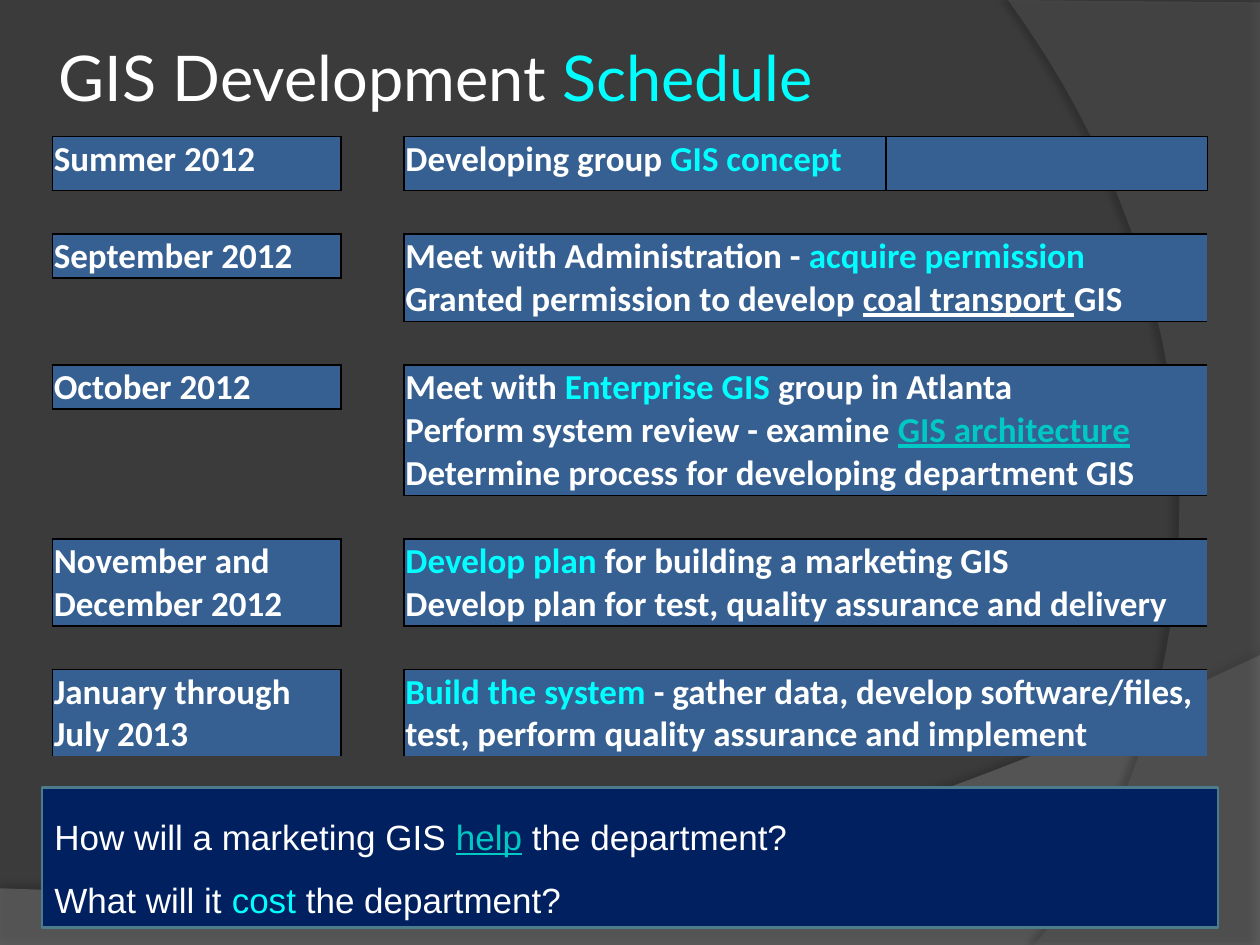
from lxml import etree
from pptx import Presentation
from pptx.dml.color import RGBColor
from pptx.enum.shapes import MSO_SHAPE
from pptx.enum.text import MSO_ANCHOR, PP_ALIGN
from pptx.oxml import parse_xml
from pptx.oxml.ns import nsdecls, qn
from pptx.util import Pt

RECTANGLE = MSO_SHAPE.RECTANGLE
MIDDLE = MSO_ANCHOR.MIDDLE
LEFT = PP_ALIGN.LEFT

WHITE, CYAN, LINK = "FFFFFF", "00FFFF", "00C8C3"
NO_STYLE = "{2D5ABB26-0587-4C30-8999-92F81FD0307C}"

# Schedule: first table row, rows of period and tasks, period, pieces of text.
# A piece is plain text or (text, colour, underlined).
SCHEDULE = [
    (0, 1, 1, "Summer 2012", ["Developing group ", ("GIS concept", CYAN, False)]),
    (2, 1, 2, "September 2012", [
        "Meet with Administration - ", ("acquire permission\n", CYAN, False),
        "Granted permission to develop ", ("coal transport ", WHITE, True), "GIS"]),
    (5, 1, 3, "October 2012", [
        "Meet with ", ("Enterprise GIS", CYAN, False),
        " group in Atlanta\nPerform system review - examine ",
        ("GIS architecture\n", LINK, True),
        "Determine process for developing department GIS"]),
    (9, 2, 2, "November and December 2012", [
        ("Develop plan", CYAN, False),
        " for building a marketing GIS\n"
        "Develop plan for test, quality assurance and delivery"]),
    (12, 2, 2, "January through July 2013", [
        ("Build the system ", CYAN, False),
        "- gather data, develop software/files,\n"
        "test, perform quality assurance and implement"]),
]
QUESTIONS = [
    ["How will a marketing GIS ", ("help", LINK, True), " the department?"],
    ["What will it ", ("cost", CYAN, False), " the department?"],
]
COLUMN_WIDTHS = [165, 36] + [91.8] * 5
ROW_HEIGHTS = [31] + [24.75] * 13


def color(value):
    return RGBColor.from_string(value)


def curve(start, control_1, control_2, end, steps=40):
    """Points along a cubic curve, without its start."""
    points = []
    for step in range(1, steps + 1):
        t = step / steps
        weights = ((1 - t) ** 3, 3 * t * (1 - t) ** 2, 3 * t * t * (1 - t), t ** 3)
        points.append(tuple(
            sum(weight * value for weight, value in zip(weights, values))
            for values in zip(start, control_1, control_2, end)))
    return points


class SlideBuilder:
    title_font, table_font, box_font = "Lato", "Calibri", "Arial"
    title_size, body_size = 36, 20
    background, cell_fill, border = "3B3B3B", "366092", "000000"
    box_fill, box_line = "002060", "4C7C8B"

    def __init__(self, presentation):
        self.slide = presentation.slides.add_slide(presentation.slide_layouts[5])
        fill = self.slide.background.fill
        fill.solid()
        fill.fore_color.rgb = color(self.background)

    def add_pieces(self, paragraph, pieces, font, size, bold=False):
        paragraph.alignment = LEFT
        for piece in pieces:
            text, tint, underlined = (piece, WHITE, False) if isinstance(piece, str) else piece
            for index, line in enumerate(text.split("\n")):
                if index:
                    paragraph.add_line_break()
                if not line:
                    continue
                run = paragraph.add_run()
                run.text = line
                run.font.name, run.font.size = font, Pt(size)
                run.font.bold, run.font.underline = bold, underlined
                run.font.color.rgb = color(tint)

    def swoosh(self, points, fill, opacity, shadow_opacity, distance, direction):
        builder = self.slide.shapes.build_freeform(
            Pt(points[0][0]), Pt(points[0][1]), scale=1.0)
        builder.add_line_segments([(Pt(x), Pt(y)) for x, y in points[1:]], close=True)
        shape = builder.convert_to_shape()
        shape.fill.solid()
        shape.fill.fore_color.rgb = color(fill)
        shape.line.fill.background()
        properties = shape.element.spPr
        tint = properties.find(qn("a:solidFill")).find(qn("a:srgbClr"))
        etree.SubElement(tint, qn("a:alpha"), val=str(opacity * 1000))
        properties.append(parse_xml(
            f'<a:effectLst {nsdecls("a")}><a:outerShdw blurRad="{Pt(4)}" '
            f'dist="{Pt(distance)}" dir="{direction * 60000}" algn="ctr" rotWithShape="0">'
            f'<a:srgbClr val="000000"><a:alpha val="{shadow_opacity * 1000}"/></a:srgbClr>'
            '</a:outerShdw></a:effectLst>'))

    def title(self, pieces, left, top, width, height):
        shape = self.slide.shapes.title
        shape.element.getparent().append(shape.element)  # in front of the swooshes
        shape.left, shape.top, shape.width, shape.height = map(Pt, (left, top, width, height))
        frame = shape.text_frame
        frame.margin_left = frame.margin_right = Pt(3.6)
        frame.margin_top = frame.margin_bottom = Pt(3.6)
        frame.vertical_anchor = MIDDLE
        self.add_pieces(frame.paragraphs[0], pieces, self.title_font, self.title_size)

    def box(self, lines, left, top, width, height):
        shape = self.slide.shapes.add_shape(RECTANGLE, *map(Pt, (left, top, width, height)))
        shape.shadow.inherit = False
        shape.fill.solid()
        shape.fill.fore_color.rgb = color(self.box_fill)
        shape.line.color.rgb = color(self.box_line)
        shape.line.width = Pt(1.5)
        frame = shape.text_frame
        frame.word_wrap = True
        frame.vertical_anchor = MIDDLE
        for index, pieces in enumerate(lines):
            paragraph = frame.add_paragraph() if index else frame.paragraphs[0]
            paragraph.line_spacing = 1.5
            self.add_pieces(paragraph, pieces, self.box_font, self.body_size)

    def table(self, left, top, widths, heights):
        frame = self.slide.shapes.add_table(
            len(heights), len(widths), Pt(left), Pt(top), Pt(sum(widths)), Pt(sum(heights)))
        table = frame.table
        table.first_row = table.horz_banding = False
        frame.element.find(".//" + qn("a:tableStyleId")).text = NO_STYLE
        for column, width in zip(table.columns, widths):
            column.width = Pt(width)
        for row, height in zip(table.rows, heights):
            row.height = Pt(height)
        for cell in table.iter_cells():
            cell.fill.background()
            cell.margin_left = cell.margin_right = cell.margin_top = Pt(0.75)
            cell.margin_bottom = 0
        return table

    def block(self, table, row, column, rows, columns, pieces, merged_columns):
        """Fill and outline a range of cells, and put the text in its first one."""
        last_row, last_column = row + rows - 1, column + columns - 1
        for r in range(row, last_row + 1):
            for c in range(column, last_column + 1):
                cell = table.cell(r, c)
                cell.fill.solid()
                cell.fill.fore_color.rgb = color(self.cell_fill)
                edges = {"L": c == column, "R": c == last_column,
                         "T": r == row, "B": r == last_row}
                self.outline(cell, [side for side, outer in edges.items() if outer])
        first = table.cell(row, column)
        if rows * merged_columns > 1:
            first.merge(table.cell(last_row, column + merged_columns - 1))
        self.add_pieces(first.text_frame.paragraphs[0], pieces,
                        self.table_font, self.body_size, bold=True)

    def outline(self, cell, sides):
        properties = cell._tc.get_or_add_tcPr()
        for index, side in enumerate(sides):
            properties.insert(index, parse_xml(
                f'<a:ln{side} {nsdecls("a")} w="{Pt(1)}"><a:solidFill>'
                f'<a:srgbClr val="{self.border}"/></a:solidFill></a:ln{side}>'))


def main():
    presentation = Presentation()
    presentation.slide_width, presentation.slide_height = Pt(720), Pt(540)
    builder = SlideBuilder(presentation)

    # Background swooshes
    builder.swoosh(
        [(0, 507.6), (0, 540), (720, 540), (720, 374.4)]
        + curve((720, 374.4), (402.5, 524.9), (281.5, 517.7), (0, 507.6)),
        "7F7F7F", 45, 35, 3.5, 270)
    builder.swoosh(
        [(720, 1.4), (720, 540), (591, 540)]
        + curve((591, 540), (673.2, 445.7), (733, 216), (576, 0)),
        "5E5E5E", 40, 45, 4, 180)

    # Title and questions
    builder.title(["GIS Development ", ("Schedule", CYAN, False)], 30, 12, 654, 63)
    builder.box(QUESTIONS, 24, 450, 672, 80)

    # Schedule
    table = builder.table(30, 78, COLUMN_WIDTHS, ROW_HEIGHTS)
    for row, period_rows, task_rows, period, tasks in SCHEDULE:
        builder.block(table, row, 0, period_rows, 1, [period], 1)
        builder.block(table, row, 2, task_rows, 5, tasks, 3 if row == 0 else 5)

    presentation.save("out.pptx")


if __name__ == "__main__":
    main()
